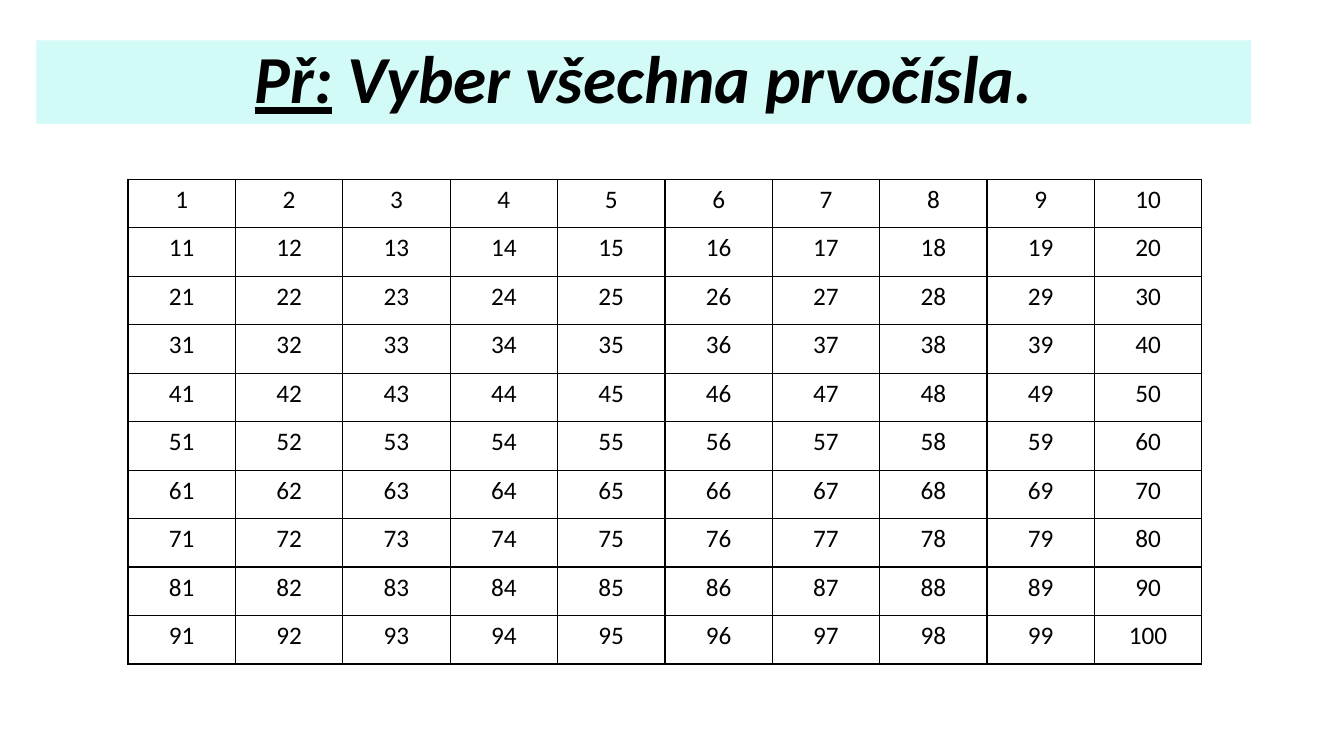
from dataclasses import dataclass

from lxml import etree
from pptx import Presentation, util as u
from pptx.dml.color import RGBColor
from pptx.enum import text
from pptx.oxml import ns

COLORS = {"ink": "000000", "band": "D2FAF6", "paper": "FFFFFF"}
FONT = "Calibri"


@dataclass
class Box:
    left: float
    top: float
    width: float
    height: float

    def place(self) -> list:
        return [u.Inches(n) for n in (self.left, self.top, self.width, self.height)]


@dataclass
class Grid:
    box: Box
    rows: int
    cols: int
    size: float
    line: float


@dataclass
class Part:
    words: str
    under: bool


TITLE = Box(0.36, 0.4, 12.05, 0.83)
PARTS = [Part("Př:", True), Part(" Vyber všechna prvočísla.", False)]
NUMBERS = Grid(Box(1.27, 1.78, 10.65, 4.81), 10, 10, 18, 1)


def style(font, size: float) -> None:
    font.name = FONT
    font.size = u.Pt(size)
    font.color.rgb = RGBColor.from_string(COLORS["ink"])


def paint(fill, color: str) -> None:
    fill.solid()
    fill.fore_color.rgb = RGBColor.from_string(COLORS[color])


def border(cell, width: float) -> None:
    props = cell._tc.get_or_add_tcPr()
    for side in "LRTB":
        line = etree.SubElement(props, ns.qn(f"a:ln{side}"), w=str(u.Pt(width)))
        solid = etree.SubElement(line, ns.qn("a:solidFill"))
        etree.SubElement(solid, ns.qn("a:srgbClr"), val=COLORS["ink"])


def head(slide, box: Box, parts: list[Part]) -> None:
    title = slide.shapes.title
    title.left, title.top, title.width, title.height = box.place()
    paint(title.fill, "band")
    frame = title.text_frame
    frame.auto_size = text.MSO_AUTO_SIZE.NONE
    frame.vertical_anchor = text.MSO_ANCHOR.MIDDLE
    para = frame.paragraphs[0]
    para.alignment = text.PP_ALIGN.CENTER
    para.line_spacing = 0.9
    for part in parts:
        run = para.add_run()
        run.text = part.words
        style(run.font, 48)
        run.font.bold = run.font.italic = True
        run.font.underline = part.under


def draw(slide, grid: Grid) -> None:
    table = slide.shapes.add_table(grid.rows, grid.cols, *grid.box.place()).table
    table.first_row = table.horz_banding = False
    for count, cell in enumerate(table.iter_cells(), 1):
        border(cell, grid.line)
        paint(cell.fill, "paper")
        para = cell.text_frame.paragraphs[0]
        para.text = str(count)
        para.alignment = text.PP_ALIGN.CENTER
        style(para.runs[0].font, grid.size)


def main() -> None:
    deck = Presentation()
    deck.slide_width, deck.slide_height = u.Inches(13.33), u.Inches(7.5)
    slide = deck.slides.add_slide(deck.slide_layouts.get_by_name("Title Only"))
    head(slide, TITLE, PARTS)
    draw(slide, NUMBERS)
    deck.save("out.pptx")


if __name__ == "__main__":
    main()
